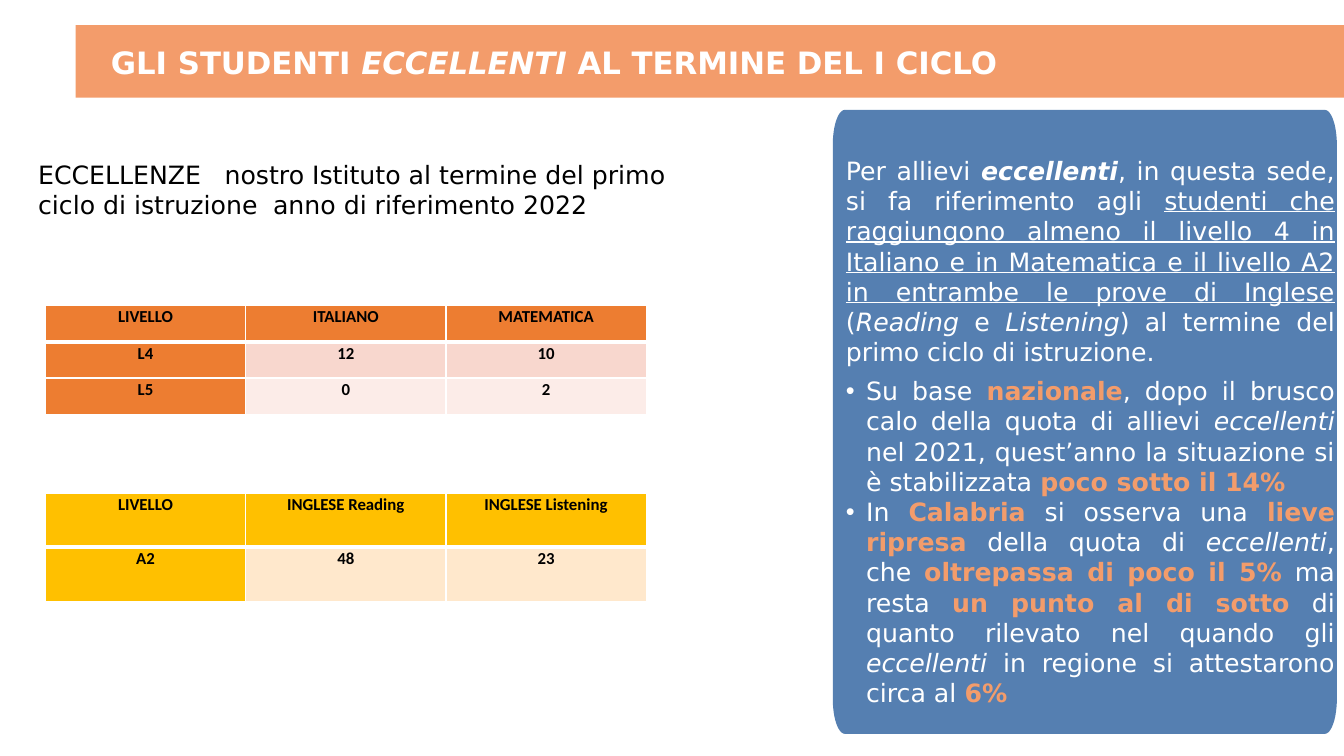
from dataclasses import dataclass
from math import cos, pi, sin
from typing import Any

from lxml.etree import SubElement
from pptx import Presentation
from pptx.dml.color import RGBColor
from pptx.enum.shapes import MSO_SHAPE
from pptx.enum.text import MSO_ANCHOR, MSO_AUTO_SIZE, PP_ALIGN
from pptx.oxml.ns import qn
from pptx.util import Inches, Pt

WHITE = RGBColor(0xFF, 0xFF, 0xFF)
BLACK = RGBColor(0x00, 0x00, 0x00)
SALMON = RGBColor(0xF3, 0x9C, 0x6B)
BLUE = RGBColor(0x0D, 0x4A, 0x91)
ORANGE = RGBColor(0xED, 0x7D, 0x31)
PINK = RGBColor(0xF8, 0xD7, 0xCE)
PALE_PINK = RGBColor(0xFC, 0xEC, 0xE8)
GOLD = RGBColor(0xFF, 0xC0, 0x00)
CREAM = RGBColor(0xFF, 0xE8, 0xCC)

TITLE_TEXT = {"name": "DejaVu Sans", "size": Pt(22), "bold": True, "italic": False}
BODY_TEXT = {"name": "DejaVu Sans", "size": Pt(18), "bold": False, "italic": False}
TABLE_TEXT = {"name": "Calibri", "size": Pt(12), "bold": True}
CELL_MARGINS = {"margin_left": Inches(0.07), "margin_right": Inches(0.07),
                "margin_top": 0, "margin_bottom": 0}
ITALIC = {"italic": True}
BOLD_ITALIC = {"bold": True, "italic": True}
UNDERLINED = {"underline": True}
ACCENT = {"bold": True, "color": SALMON}


@dataclass(frozen=True)
class Span:
    text: str
    style: dict[str, Any] | None = None


@dataclass(frozen=True)
class ScoreTable:
    top: float
    row_height: float
    rows: list[list[str]]
    header_color: RGBColor
    band_colors: list[RGBColor]


TITLE = [Span("GLI STUDENTI "), Span("ECCELLENTI", ITALIC), Span(" AL TERMINE DEL I CICLO")]
DEFINITION = [
    Span("Per allievi "), Span("eccellenti", BOLD_ITALIC),
    Span(", in questa sede, si fa riferimento agli "),
    Span("studenti che raggiungono almeno il livello 4 in Italiano e in Matematica "
         "e il livello A2 in entrambe le prove di Inglese ", UNDERLINED),
    Span("("), Span("Reading", ITALIC), Span(" e "), Span("Listening", ITALIC),
    Span(") al termine del primo ciclo di istruzione."),
]
FINDINGS = [
    [Span("Su base "), Span("nazionale", ACCENT),
     Span(", dopo il brusco calo della quota di allievi "), Span("eccellenti", ITALIC),
     Span(" nel 2021, quest’anno la situazione si è stabilizzata "),
     Span("poco sotto il 14%", ACCENT)],
    [Span("In "), Span("Calabria", ACCENT), Span(" si osserva una "),
     Span("lieve ripresa", ACCENT), Span(" della quota di "), Span("eccellenti", ITALIC),
     Span(", che "), Span("oltrepassa di poco il 5%", ACCENT), Span(" ma resta "),
     Span("un punto al di sotto", ACCENT), Span(" di quanto rilevato nel quando gli "),
     Span("eccellenti", ITALIC), Span(" in regione si attestarono circa al "),
     Span("6%", ACCENT)],
]
SCORE_TABLES = [
    ScoreTable(3.03, 0.36, [["LIVELLO", "ITALIANO", "MATEMATICA"],
                            ["L4", "12", "10"], ["L5", "0", "2"]],
               ORANGE, [PINK, PALE_PINK]),
    ScoreTable(4.89, 0.54, [["LIVELLO", "INGLESE Reading", "INGLESE Listening"],
                            ["A2", "48", "23"]], GOLD, [CREAM]),
]


def apply_format(target: Any, values: dict[str, Any]) -> None:
    for name, value in values.items():
        if name == "color":
            target.color.rgb = value
        else:
            setattr(target, name, value)


def write_spans(paragraph, spans: list[Span], base: dict[str, Any], color: RGBColor) -> None:
    for span in spans:
        run = paragraph.add_run()
        run.text = span.text
        apply_format(run.font, {**base, "color": color, **(span.style or {})})


def place_text(shape, left: float, top: float, width: float, height: float):
    apply_format(shape, {"left": Inches(left), "top": Inches(top),
                         "width": Inches(width), "height": Inches(height)})
    apply_format(shape.text_frame, {"word_wrap": True, "vertical_anchor": MSO_ANCHOR.TOP,
                                    "auto_size": MSO_AUTO_SIZE.SHAPE_TO_FIT_TEXT})
    return shape.text_frame


def set_bullet(paragraph, character: str | None) -> None:
    properties = paragraph._p.get_or_add_pPr()
    indent = Inches(0.2) if character else 0
    properties.set("marL", str(indent))
    properties.set("indent", str(-indent))
    if character:
        SubElement(properties, qn("a:buFont"), typeface="Arial")
        SubElement(properties, qn("a:buChar"), char=character)
    else:
        SubElement(properties, qn("a:buNone"))


def set_tabs(paragraph, positions: list[float]) -> None:
    tab_list = SubElement(paragraph._p.get_or_add_pPr(), qn("a:tabLst"))
    for position in positions:
        SubElement(tab_list, qn("a:tab"), pos=str(Inches(position)), algn="l")


def style_shape(shape, color: RGBColor) -> None:
    shape.shadow.inherit = False
    shape.fill.solid()
    shape.fill.fore_color.rgb = color
    shape.line.fill.background()


def add_panel(slide, left: float, top: float, width: float, height: float):
    """Draw the translucent panel with elliptical corners."""
    radius_x, radius_y, steps = 0.12, 0.35, 12
    right, bottom = left + width, top + height
    centers = [(right - radius_x, bottom - radius_y), (left + radius_x, bottom - radius_y),
               (left + radius_x, top + radius_y), (right - radius_x, top + radius_y)]
    points = []
    for quarter, (center_x, center_y) in enumerate(centers):
        for step in range(steps + 1):
            angle = (quarter + step / steps) * pi / 2
            points.append((Inches(center_x + radius_x * cos(angle)),
                           Inches(center_y + radius_y * sin(angle))))
    builder = slide.shapes.build_freeform(*points[0])
    builder.add_line_segments(points[1:], close=True)
    panel = builder.convert_to_shape()
    style_shape(panel, BLUE)
    color = panel.element.spPr.find(qn("a:solidFill"))[0]
    SubElement(color, qn("a:alpha"), val="70000")
    return panel


def set_borders(cell, widths: dict[str, int]) -> None:
    properties = cell._tc.get_or_add_tcPr()
    for side, width in widths.items():
        line = SubElement(properties, qn(f"a:ln{side}"), w=str(Pt(width)))
        fill = SubElement(line, qn("a:solidFill"))
        SubElement(fill, qn("a:srgbClr"), val=str(WHITE))


def add_score_table(slide, scores: ScoreTable) -> None:
    row_count, column_count = len(scores.rows), len(scores.rows[0])
    table = slide.shapes.add_table(
        row_count, column_count, Inches(0.45), Inches(scores.top),
        Inches(5.96), Inches(scores.row_height * row_count)).table
    for row_index, row in enumerate(scores.rows):
        table.rows[row_index].height = Inches(scores.row_height)
        for column_index, text in enumerate(row):
            cell = table.cell(row_index, column_index)
            is_header = row_index == 0 or column_index == 0
            set_borders(cell, {"L": 1, "R": 1, "T": 3 if row_index == 1 else 1,
                               "B": 3 if row_index == 0 else 1})
            cell.fill.solid()
            cell.fill.fore_color.rgb = (scores.header_color if is_header
                                        else scores.band_colors[row_index - 1])
            apply_format(cell, CELL_MARGINS)
            paragraph = cell.text_frame.paragraphs[0]
            apply_format(paragraph, {"alignment": PP_ALIGN.CENTER, "line_spacing": 1.07,
                                     "space_after": Pt(8)})
            write_spans(paragraph, [Span(text)], TABLE_TEXT, BLACK)


def main() -> None:
    presentation = Presentation()
    presentation.slide_width, presentation.slide_height = Inches(13.33), Inches(7.5)
    slide = presentation.slides.add_slide(presentation.slide_layouts[1])
    title, body = slide.shapes.title, slide.placeholders[1]

    band = slide.shapes.add_shape(MSO_SHAPE.RECTANGLE, Inches(0.75), Inches(0.25),
                                  Inches(12.58), Inches(0.72))
    style_shape(band, SALMON)
    panel = add_panel(slide, 8.26, 1.09, 5, 6.19)
    for backdrop in (band, panel):
        title.element.addprevious(backdrop.element)

    heading = place_text(title, 1, 0.38, 12.33, 0.47).paragraphs[0]
    heading.alignment = PP_ALIGN.LEFT
    write_spans(heading, TITLE, TITLE_TEXT, WHITE)

    frame = place_text(body, 8.29, 1.49, 5.05, 5.64)
    for index, spans in enumerate([DEFINITION, *FINDINGS]):
        paragraph = frame.add_paragraph() if index else frame.paragraphs[0]
        set_bullet(paragraph, "•" if index else None)
        apply_format(paragraph, {"alignment": PP_ALIGN.JUSTIFY,
                                 "space_before": Pt(6 if index == 1 else 0)})
        write_spans(paragraph, spans, BODY_TEXT, WHITE)

    for scores in SCORE_TABLES:
        add_score_table(slide, scores)

    caption_box = slide.shapes.add_textbox(0, 0, 0, 0)
    caption = place_text(caption_box, 0.28, 1.53, 7.03, 0.71).paragraphs[0]
    set_tabs(caption, [1.85, 2.33])
    write_spans(caption, [Span("ECCELLENZE\tnostro Istituto al termine del primo ciclo di "
                               "istruzione\tanno di riferimento 2022")], BODY_TEXT, BLACK)
    presentation.save("out.pptx")


if __name__ == "__main__":
    main()
